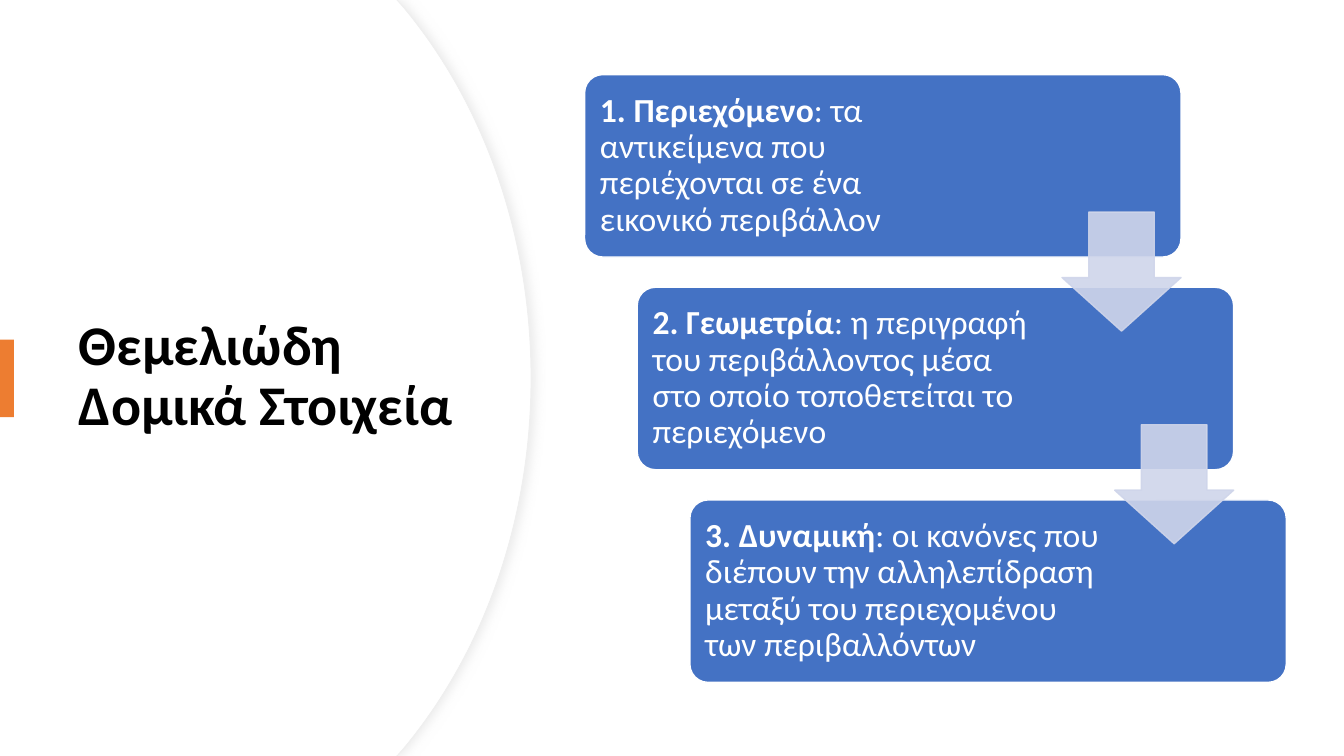
import dataclasses

import lxml.etree
import pptx
import pptx.dml.color
import pptx.dml.fill
import pptx.enum.shapes
import pptx.enum.text
import pptx.oxml.ns
import pptx.shapes.base
import pptx.shapes.shapetree
import pptx.text.text
import pptx.util

Pt = pptx.util.Pt
Preset = pptx.enum.shapes.MSO_SHAPE
SLIDE_HEIGHT = 540
FONT_NAME = "Calibri"


@dataclasses.dataclass(frozen=True)
class Box:
    left: float
    top: float
    width: float
    height: float

    def lengths(self) -> list[int]:
        return [Pt(value) for value in dataclasses.astuple(self)]

    def shifted(self, right: float, down: float) -> "Box":
        return dataclasses.replace(self, left=self.left + right, top=self.top + down)


@dataclasses.dataclass(frozen=True)
class Look:
    fill: str
    line: str | None = None
    line_width: float = 1
    opacity: int = 100


@dataclasses.dataclass(frozen=True)
class Step:
    term: str
    meaning: str
    text_width: float


STEPS = [
    Step("1. Περιεχόμενο", ": τα αντικείμενα που περιέχονται σε ένα εικονικό περιβάλλον", 285),
    Step("2. Γεωμετρία", ": η περιγραφή του περιβάλλοντος μέσα στο οποίο τοποθετείται το περιεχόμενο", 296),
    Step("3. Δυναμική", ": οι κανόνες που διέπουν την αλληλεπίδραση μεταξύ του περιεχομένου των περιβαλλόντων", 296),
]
CARD = Box(417.6, 53.3, 426, 130.3)
CARD_TEXT = Box(421.5, 57.2, 285, 122.5)
ARROW = Box(758.6, 151.5, 85, 85)
STEP_RIGHT, STEP_DOWN = 37.6, 151.9
CARD_LOOK = Look("4472C4", "FFFFFF")
ARROW_LOOK = Look("CFD5EA", "CFD5EA", opacity=90)
ACCENT_LOOK = Look("ED7D31")


def add_xml(parent: lxml.etree._Element, tag: str, **attributes: str) -> lxml.etree._Element:
    return lxml.etree.SubElement(parent, pptx.oxml.ns.qn(tag), attributes)


def paint(fill: pptx.dml.fill.FillFormat, colour: str, opacity: int = 100) -> None:
    fill.solid()
    fill.fore_color.rgb = pptx.dml.color.RGBColor.from_string(colour)
    if opacity < 100:
        for node in fill.fore_color._xFill.iter(pptx.oxml.ns.qn("a:srgbClr")):
            add_xml(node, "a:alpha", val=str(opacity * 1000))


def apply_look(shape: pptx.shapes.base.BaseShape, look: Look) -> None:
    shape.shadow.inherit = False
    paint(shape.fill, look.fill, look.opacity)
    if look.line:
        shape.line.width = Pt(look.line_width)
        paint(shape.line.fill, look.line, look.opacity)
    else:
        shape.line.fill.background()


def add_preset(shapes: pptx.shapes.shapetree._BaseGroupShapes, preset: Preset, box: Box,
               look: Look, adjustments: tuple[float, ...] = ()) -> None:
    shape = shapes.add_shape(preset, *box.lengths())
    for index, value in enumerate(adjustments):
        shape.adjustments[index] = value
    apply_look(shape, look)


def add_run(paragraph: pptx.text.text._Paragraph, text: str, size: float, colour: str, bold: bool) -> None:
    run = paragraph.add_run()
    run.text = text
    for name, value in {"name": FONT_NAME, "size": Pt(size), "bold": bold}.items():
        setattr(run.font, name, value)
    paint(run.font.fill, colour)


def format_frame(frame: pptx.text.text.TextFrame, side: float, edge: float) -> pptx.text.text._Paragraph:
    settings = {
        "word_wrap": True,
        "auto_size": pptx.enum.text.MSO_AUTO_SIZE.NONE,
        "vertical_anchor": pptx.enum.text.MSO_ANCHOR.MIDDLE,
        "margin_left": Pt(side), "margin_right": Pt(side),
        "margin_top": Pt(edge), "margin_bottom": Pt(edge),
    }
    for name, value in settings.items():
        setattr(frame, name, value)
    paragraph = frame.paragraphs[0]
    paragraph.alignment = pptx.enum.text.PP_ALIGN.LEFT
    paragraph.line_spacing = 0.9
    return paragraph


def bend(segment: lxml.etree._Element, controls: list[tuple[float, float]]) -> None:
    curve = lxml.etree.Element(pptx.oxml.ns.qn("a:cubicBezTo"))
    for x, y in controls:
        add_xml(curve, "a:pt", x=str(round(x * 100)), y=str(round(y * 100)))
    curve.append(segment[0])
    segment.getparent().replace(segment, curve)


def add_panel(shapes: pptx.shapes.shapetree.SlideShapes, right: float, look: Look) -> pptx.shapes.base.BaseShape:
    upper = [(right - 95.8, 0), (right - 90.7, 5.8)]
    lower = [(x, SLIDE_HEIGHT - y) for x, y in reversed(upper)]
    outline = [*upper, (right, SLIDE_HEIGHT / 2), *lower, (0, SLIDE_HEIGHT)]
    builder = shapes.build_freeform(0, 0, scale=Pt(1) / 100)
    builder.add_line_segments([(round(x * 100), round(y * 100)) for x, y in outline])
    panel = builder.convert_to_shape()
    segments = list(panel.element.iter(pptx.oxml.ns.qn("a:lnTo")))
    controls = [(right - 34.5, 73.4), (right, 167)]
    bend(segments[2], controls)
    bend(segments[3], [(x, SLIDE_HEIGHT - y) for x, y in reversed(controls)])
    apply_look(panel, look)
    return panel


def add_soft_shadow(shape: pptx.shapes.base.BaseShape) -> None:
    effects = shape.element.spPr.find(pptx.oxml.ns.qn("a:effectLst"))
    shadow = add_xml(effects, "a:outerShdw", blurRad=str(Pt(7)), dist=str(Pt(3)), dir="0",
                     algn="l", rotWithShape="0")
    add_xml(add_xml(shadow, "a:srgbClr", val="D9D9D9"), "a:alpha", val="50000")


def main() -> None:
    presentation = pptx.Presentation()
    presentation.slide_width, presentation.slide_height = Pt(960), Pt(SLIDE_HEIGHT)
    slide = presentation.slides.add_slide(presentation.slide_layouts[5])

    add_soft_shadow(add_panel(slide.shapes, 379.4, Look("FFFFFF", "EFEFEF", 0.75)))
    add_panel(slide.shapes, 378.7, Look("FFFFFF"))

    title = slide.shapes.title
    title.left, title.top, title.width, title.height = Box(49, 91.4, 283.7, 356.4).lengths()
    add_run(format_frame(title.text_frame, 7.2, 3.6), "Θεμελιώδη Δομικά Στοιχεία", 40, "000000", True)
    slide.shapes.element.append(title.element)
    add_preset(slide.shapes, Preset.RECTANGLE, Box(0, 242.6, 10, 55.4), ACCENT_LOOK)

    diagram = slide.shapes.add_group_shape().shapes
    offsets = [(STEP_RIGHT * index, STEP_DOWN * index) for index in range(len(STEPS))]
    for step, offset in zip(STEPS, offsets):
        add_preset(diagram, Preset.ROUNDED_RECTANGLE, CARD.shifted(*offset), CARD_LOOK, (0.1,))
        text_box = dataclasses.replace(CARD_TEXT.shifted(*offset), width=step.text_width)
        paragraph = format_frame(diagram.add_textbox(*text_box.lengths()).text_frame, 7.2, 7.2)
        add_run(paragraph, step.term, 24, "FFFFFF", True)
        add_run(paragraph, step.meaning, 24, "FFFFFF", False)
    for offset in offsets[:-1]:
        add_preset(diagram, Preset.DOWN_ARROW, ARROW.shifted(*offset), ARROW_LOOK, (0.55, 0.45))

    presentation.save("out.pptx")


if __name__ == "__main__":
    main()
